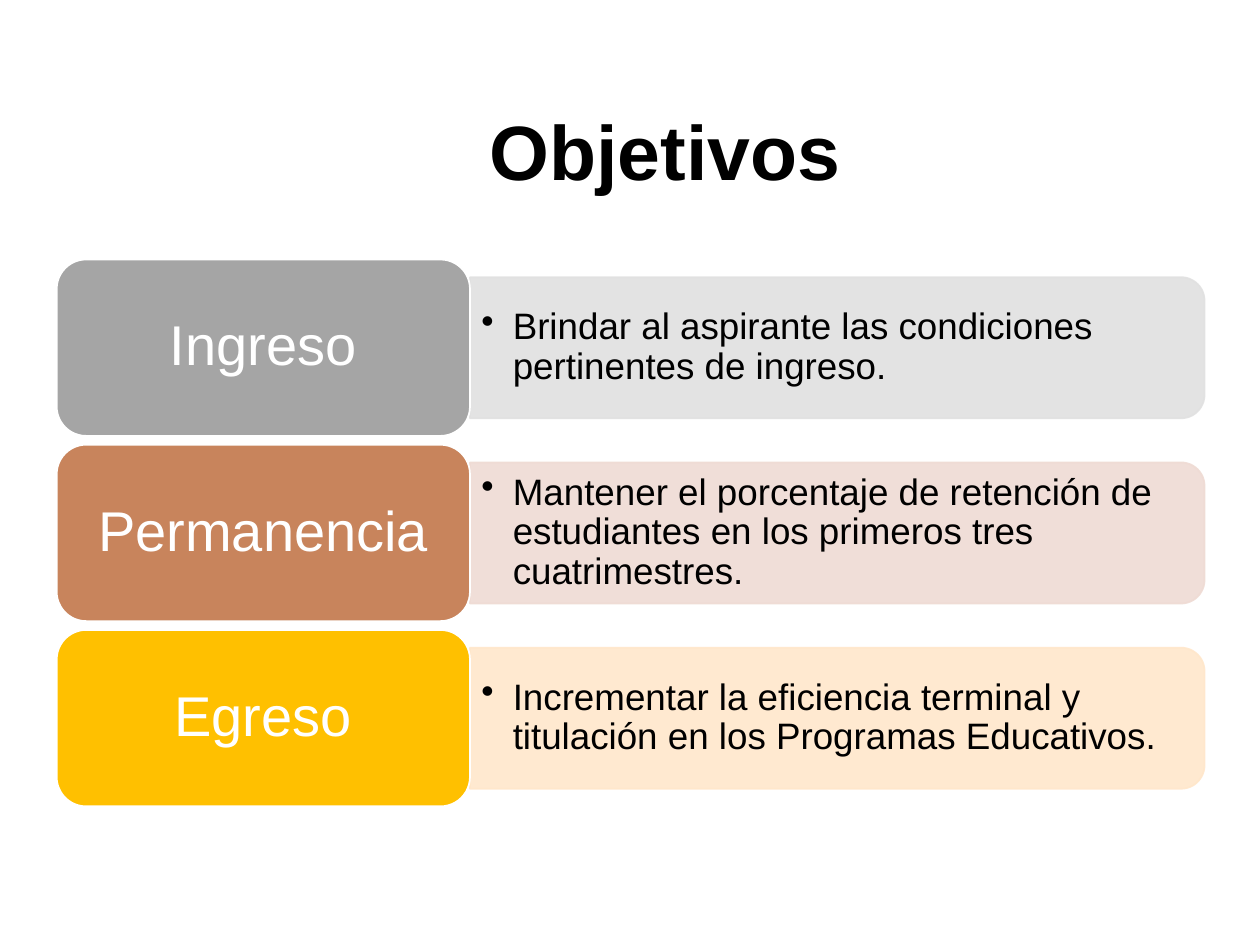
from dataclasses import dataclass

from lxml import etree
from pptx import Presentation
from pptx.dml.color import RGBColor
from pptx.enum.shapes import MSO_SHAPE
from pptx.enum.text import MSO_ANCHOR, MSO_AUTO_SIZE, PP_ALIGN
from pptx.oxml.ns import qn
from pptx.util import Inches, Pt

ROUNDED = MSO_SHAPE.ROUNDED_RECTANGLE
ROUNDED_TOP = MSO_SHAPE.ROUND_2_SAME_RECTANGLE
MIDDLE = MSO_ANCHOR.MIDDLE
CENTER = PP_ALIGN.CENTER
FIT_SHAPE = MSO_AUTO_SIZE.SHAPE_TO_FIT_TEXT

FONT = "Arial"
COLORS = {
    "black": "000000",
    "white": "FFFFFF",
    "gray": "A5A5A5",
    "gray_tint": "E1E1E1",
    "copper": "C8845C",
    "copper_tint": "EFDBD4",
    "gold": "FFC000",
    "gold_tint": "FFE7CB",
}

# Row geometry in inches
LABEL_LEFT, LABEL_WIDTH, LABEL_HEIGHT = 0.45, 3.28, 1.4
PANEL_LEFT, PANEL_WIDTH, PANEL_HEIGHT = 3.73, 5.83, 1.12
TEXT_WIDTH, TEXT_HEIGHT = 5.77, 1.01
FIRST_CENTER, ROW_PITCH = 2.76, 1.47


@dataclass
class Objective:
    label: str
    description: str
    color: str


OBJECTIVES = [
    Objective("Ingreso",
              "Brindar al aspirante las condiciones pertinentes de ingreso.", "gray"),
    Objective("Permanencia",
              "Mantener el porcentaje de retención de estudiantes en los primeros "
              "tres cuatrimestres.", "copper"),
    Objective("Egreso",
              "Incrementar la eficiencia terminal y titulación en los Programas "
              "Educativos.", "gold"),
]


def rgb(name: str) -> RGBColor:
    return RGBColor.from_string(COLORS[name])


def style_font(paragraph, size: int, color: str, bold: bool = False) -> None:
    font = paragraph.font
    font.name, font.size, font.bold = FONT, Pt(size), bold
    font.color.rgb = rgb(color)


def set_margins(text_frame, horizontal: float, vertical: float) -> None:
    text_frame.margin_left = text_frame.margin_right = Inches(horizontal)
    text_frame.margin_top = text_frame.margin_bottom = Inches(vertical)


def add_block(slide, kind, left: float, top: float, width: float, height: float,
              fill: str, line: str):
    shape = slide.shapes.add_shape(
        kind, Inches(left), Inches(top), Inches(width), Inches(height))
    shape.shadow.inherit = False
    shape.fill.solid()
    shape.fill.fore_color.rgb = rgb(fill)
    shape.line.color.rgb = rgb(line)
    shape.line.width = Pt(1)
    return shape


def add_bullet(paragraph) -> None:
    properties = paragraph._p.get_or_add_pPr()
    properties.set("marL", str(Inches(0.25)))
    properties.set("indent", str(-Inches(0.25)))
    etree.SubElement(properties, qn("a:buChar"), char="•")


def add_title(slide, text: str) -> None:
    box = slide.shapes.add_textbox(Inches(3.25), Inches(0.77), Inches(4.06), Inches(0.84))
    text_frame = box.text_frame
    text_frame.word_wrap = True
    text_frame.auto_size = FIT_SHAPE
    text_frame.text = text
    paragraph = text_frame.paragraphs[0]
    paragraph.alignment = CENTER
    style_font(paragraph, 44, "black", bold=True)


def add_panel(slide, center: float, color: str) -> None:
    # Turned a quarter so that the rounded corners face right
    middle = PANEL_LEFT + PANEL_WIDTH / 2
    panel = add_block(slide, ROUNDED_TOP, middle - PANEL_HEIGHT / 2,
                      center - PANEL_WIDTH / 2, PANEL_HEIGHT, PANEL_WIDTH, color, color)
    panel.rotation = 90
    for color_element in panel._element.spPr.iter(qn("a:srgbClr")):
        etree.SubElement(color_element, qn("a:alpha"), val="90000")


def add_description(slide, center: float, text: str) -> None:
    box = slide.shapes.add_textbox(
        Inches(PANEL_LEFT), Inches(center - TEXT_HEIGHT / 2),
        Inches(TEXT_WIDTH), Inches(TEXT_HEIGHT))
    text_frame = box.text_frame
    text_frame.word_wrap = True
    text_frame.vertical_anchor = MIDDLE
    set_margins(text_frame, 0.09, 0.04)
    text_frame.text = text
    paragraph = text_frame.paragraphs[0]
    add_bullet(paragraph)
    paragraph.line_spacing = 0.9
    style_font(paragraph, 21, "black")


def add_label(slide, center: float, text: str, color: str) -> None:
    label = add_block(slide, ROUNDED, LABEL_LEFT, center - LABEL_HEIGHT / 2,
                      LABEL_WIDTH, LABEL_HEIGHT, color, "white")
    text_frame = label.text_frame
    text_frame.word_wrap = True
    text_frame.vertical_anchor = MIDDLE
    set_margins(text_frame, 0.13, 0.07)
    text_frame.text = text
    paragraph = text_frame.paragraphs[0]
    paragraph.alignment = CENTER
    paragraph.line_spacing = 0.9
    style_font(paragraph, 32, "white")


def main() -> None:
    presentation = Presentation()
    presentation.slide_width, presentation.slide_height = Inches(10), Inches(7.5)
    slide = presentation.slides.add_slide(presentation.slide_layouts[6])

    add_title(slide, "Objetivos")

    # One row per objective: panel, description, label
    for row, objective in enumerate(OBJECTIVES):
        center = FIRST_CENTER + row * ROW_PITCH
        add_panel(slide, center, f"{objective.color}_tint")
        add_description(slide, center, objective.description)
        add_label(slide, center, objective.label, objective.color)

    presentation.save("out.pptx")


if __name__ == "__main__":
    main()
